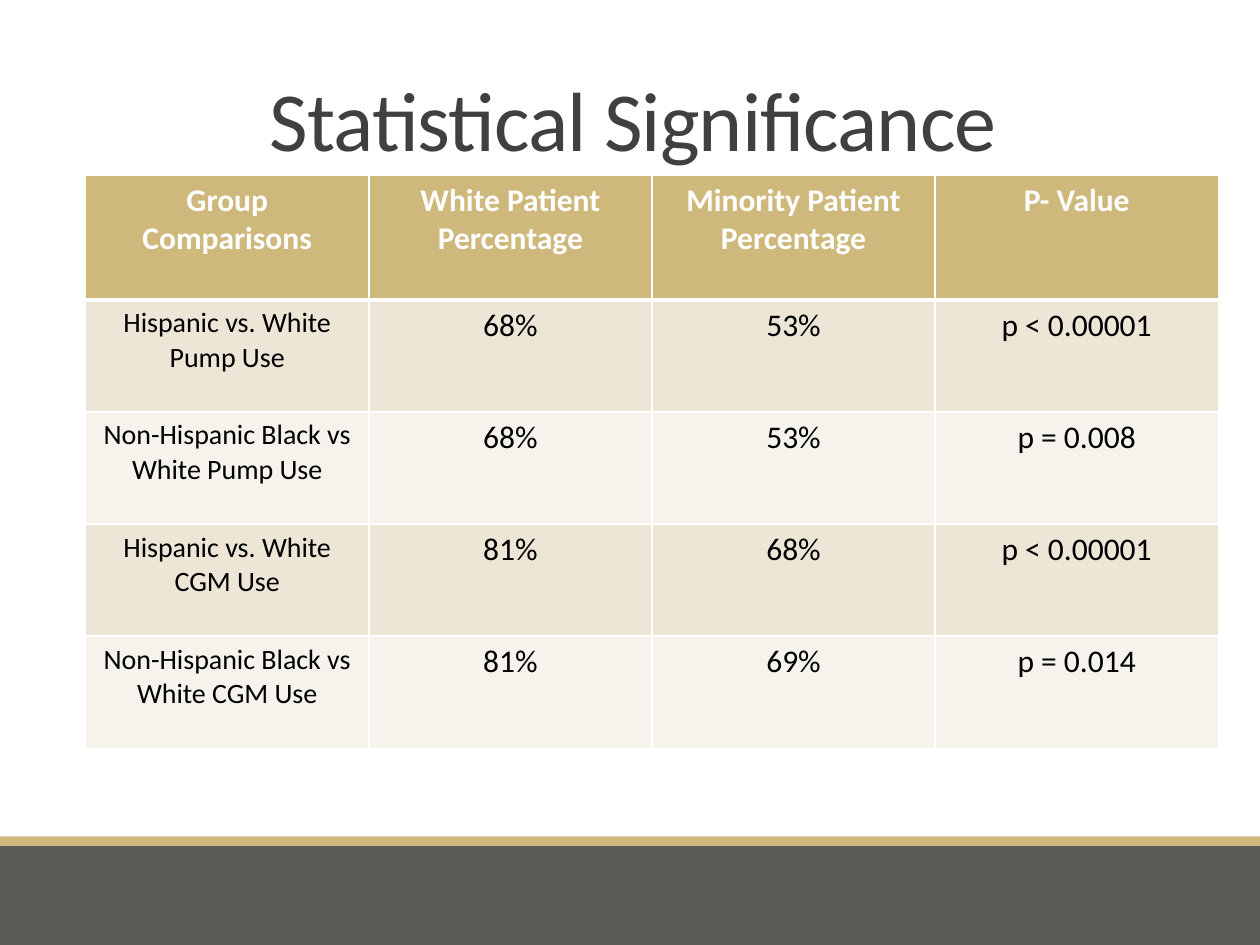
from dataclasses import dataclass

from pptx import Presentation
from pptx.dml.color import RGBColor
from pptx.enum.shapes import MSO_SHAPE
from pptx.enum.text import MSO_ANCHOR, PP_ALIGN
from pptx.oxml import parse_xml
from pptx.oxml.ns import nsdecls
from pptx.util import Inches, Pt


@dataclass(frozen=True)
class Theme:
    font: str = "Calibri"
    title: str = "404040"
    gold: str = "CFB87C"
    slate: str = "595955"
    white: str = "FFFFFF"
    black: str = "000000"
    bands: tuple = ("EDE6D7", "F6F3EC")
    title_size: int = 48
    body_size: int = 18
    label_size: int = 16


theme = Theme()


def write_text(frame, text, *, size, color, bold=False, line_spacing=1.0, tracking=0):
    para = frame.paragraphs[0]
    para.alignment = PP_ALIGN.CENTER
    para.line_spacing = line_spacing
    span = para.add_run()
    span.text = text
    span.font.name = theme.font
    span.font.size = Pt(size)
    span.font.bold = bold
    span.font.color.rgb = RGBColor.from_string(color)
    if tracking:
        span.font._element.set("spc", str(int(tracking * 100)))


def style_cell(cell, fill, top, bottom):
    properties = cell._tc.get_or_add_tcPr()
    for side, width in (("L", 1), ("R", 1), ("T", top), ("B", bottom)):
        properties.append(parse_xml(
            f'<a:ln{side} {nsdecls("a")} w="{Pt(width)}"><a:solidFill>'
            f'<a:srgbClr val="{theme.white}"/></a:solidFill></a:ln{side}>'))
    cell.fill.solid()
    cell.fill.fore_color.rgb = RGBColor.from_string(fill)


# Deck and slide
deck = Presentation()
deck.slide_width, deck.slide_height = Inches(10), Inches(7.5)
slide = deck.slides.add_slide(deck.slide_layouts[5])

# Footer bands, as shares of the slide height
for color, top, height in ((theme.slate, 0.895, 0.105), (theme.gold, 0.885, 0.01)):
    band = slide.shapes.add_shape(
        MSO_SHAPE.RECTANGLE, 0, int(deck.slide_height * top),
        deck.slide_width, int(deck.slide_height * height))
    band.shadow.inherit = False
    band.fill.solid()
    band.fill.fore_color.rgb = RGBColor.from_string(color)
    band.line.fill.background()

# Title
title = slide.shapes.title
title.left, title.top = Inches(0.9), Inches(0.31)
title.width, title.height = Inches(8.25), Inches(1.08)
title.text_frame.vertical_anchor = MSO_ANCHOR.BOTTOM
write_text(title.text_frame, "Statistical Significance", size=theme.title_size,
           color=theme.title, line_spacing=0.85, tracking=-0.5)

# Comparison table
rows = [
    ("Group Comparisons", "White Patient Percentage", "Minority Patient Percentage", "P- Value"),
    ("Hispanic vs. White Pump Use", "68%", "53%", "p < 0.00001"),
    ("Non-Hispanic Black vs White Pump Use", "68%", "53%", "p = 0.008"),
    ("Hispanic vs. White CGM Use", "81%", "68%", "p < 0.00001"),
    ("Non-Hispanic Black vs White CGM Use", "81%", "69%", "p = 0.014"),
]
header_height, row_height = 0.99, 0.89
table = slide.shapes.add_table(
    len(rows), len(rows[0]), Inches(0.68), Inches(1.39), Inches(8.99),
    Inches(header_height + row_height * (len(rows) - 1))).table

for row, values in enumerate(rows):
    header = row == 0
    table.rows[row].height = Inches(header_height if header else row_height)
    for column, text in enumerate(values):
        cell = table.cell(row, column)
        style_cell(cell, theme.gold if header else theme.bands[(row - 1) % 2],
                   top=3 if row == 1 else 1, bottom=3 if header else 1)
        is_label = column == 0 and not header
        write_text(cell.text_frame, text, bold=header,
                   size=theme.label_size if is_label else theme.body_size,
                   color=theme.white if header else theme.black)

deck.save("out.pptx")
